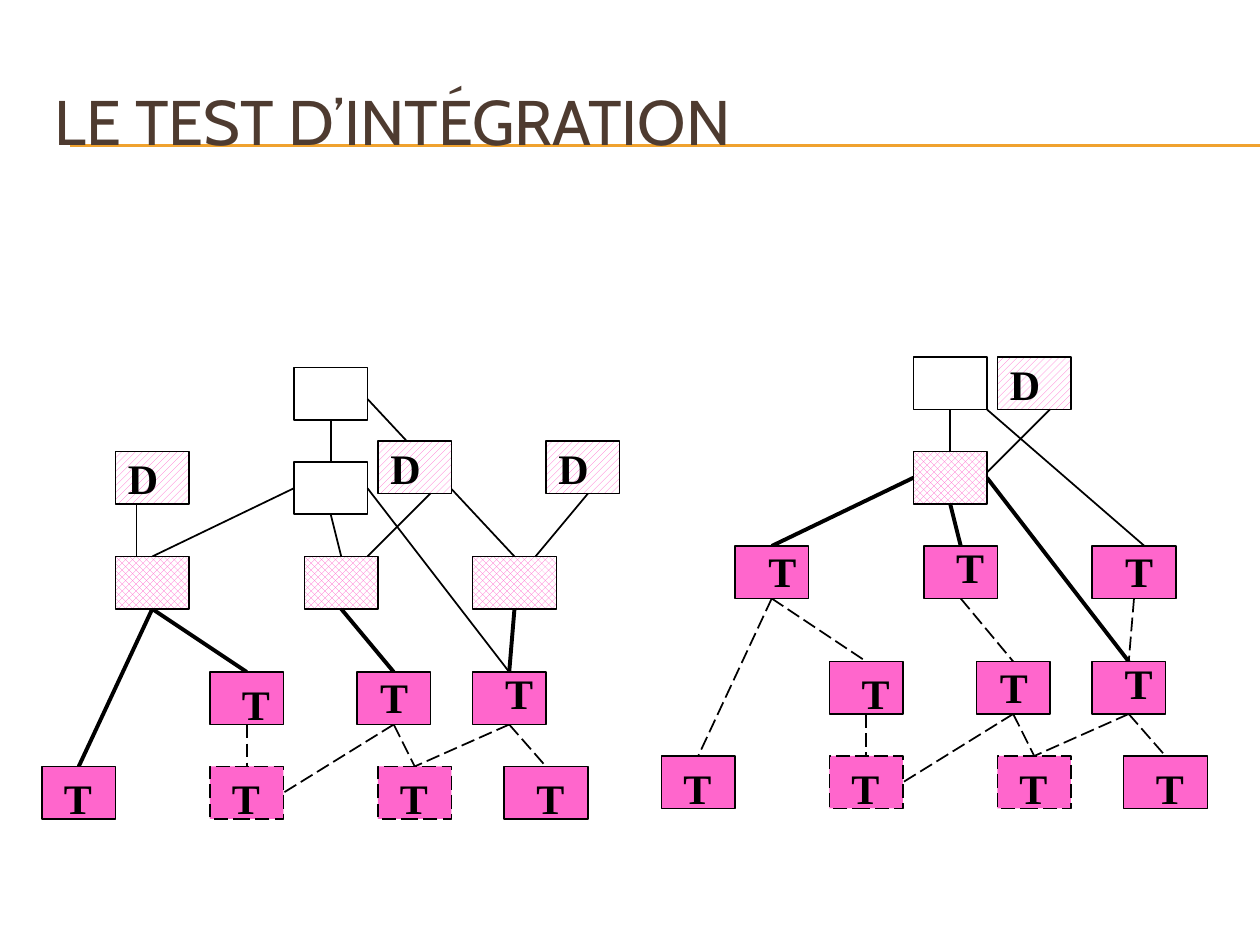
from lxml import etree
from pptx import Presentation
from pptx import util as u
from pptx.dml.color import RGBColor
from pptx.enum import dml, shapes, text
from pptx.oxml.ns import qn

BLACK, WHITE, PINK = "000000", "FFFFFF", "FF66CC"
BROWN, ORANGE = "4E3B30", "F0A22E"
BOX_WIDTH, BOX_HEIGHT = 42, 30
THIN, THICK = 1, 2.25
HATCHED = dml.MSO_PATTERN.WIDE_UPWARD_DIAGONAL
DIAMONDS = dml.MSO_PATTERN.OUTLINED_DIAMOND
LETTER = dict(size=24, font="Times New Roman", color=BLACK, bold=True)

# Module: left, top, width, then offset of its letter "T"
MODULES = {
    "root": (168, 210, 42, 0, 0),
    "sub": (168, 264, 42, 0, 0),
    "left": (66, 318, 42, 12, 0),
    "center": (174, 318, 42, 11.3, -2.4),
    "right": (270, 318, 48, 11.8, 0),
    "mid1": (120, 384, 42, 11.2, 3.5),
    "mid2": (204, 384, 42, 6.2, 0),
    "mid3": (270, 384, 42, 11.5, -2.4),
    "leaf1": (24, 438, 42, 5.4, 3.5),
    "leaf2": (120, 438, 42, 5.4, 3.5),
    "leaf3": (216, 438, 42, 5.4, 3.5),
    "leaf4": (288, 438, 48, 11.4, 3.5),
}
DASHED_MODULES = {"leaf2", "leaf3"}

# Caller, side it leaves from, callee, side it reaches
LINKS = [
    ("root", "bottom", "sub", "top"),
    ("sub", "left", "left", "top"),
    ("sub", "bottom", "center", "top"),
    ("sub", "right", "mid3", "top"),
    ("left", "bottom", "leaf1", "top"),
    ("left", "bottom", "mid1", "top"),
    ("center", "bottom", "mid2", "top"),
    ("right", "bottom", "mid3", "top"),
    ("mid1", "bottom", "leaf2", "top"),
    ("mid2", "bottom", "leaf2", "right"),
    ("mid2", "bottom", "leaf3", "top"),
    ("mid3", "bottom", "leaf3", "top"),
    ("mid3", "bottom", "leaf4", "top"),
]

# Each step of the integration; drivers hold a corner and a line
STEPS = [
    dict(
        offset=(0, 0),
        untested={"root", "sub"},
        under_test={"left", "center", "right"},
        root_link=(210, 228, 294, 318),
        drivers=[
            ((66, 258), (78, 288, 78, 318)),
            ((216, 252), (246, 282, 210, 318)),
            ((312, 252), (336, 282, 306, 318)),
        ],
    ),
    dict(
        offset=(354, -6),
        untested={"root"},
        under_test={"sub"},
        root_link=(210, 240, 300, 318),
        drivers=[((216, 210), (246, 240, 210, 276))],
    ),
]


def rgb(color):
    return RGBColor.from_string(color)


def write_text(shape, content, *, size, font, color, bold=False, left_inset=7.2):
    frame = shape.text_frame
    frame.word_wrap = True
    frame.vertical_anchor = text.MSO_ANCHOR.MIDDLE
    frame.margin_left = u.Pt(left_inset)
    frame.margin_right = frame.margin_top = frame.margin_bottom = 0
    paragraph = frame.paragraphs[0]
    paragraph.alignment = text.PP_ALIGN.LEFT
    run = paragraph.add_run()
    run.text = content
    run.font.size = u.Pt(size)
    run.font.name = font
    run.font.bold = bold
    run.font.color.rgb = rgb(color)


def format_line(line, color, width, dashed=False):
    line.color.rgb = rgb(color)
    line.width = u.Pt(width)
    if dashed:
        line.dash_style = dml.MSO_LINE.LONG_DASH


def add_line(parent, ends, color=BLACK, width=THIN, dashed=False):
    connector = parent.add_connector(
        shapes.MSO_CONNECTOR.STRAIGHT, *(u.Pt(value) for value in ends)
    )
    format_line(connector.line, color, width, dashed)
    etree.SubElement(connector.element.spPr, qn("a:effectLst"))


def add_box(parent, left, top, width=BOX_WIDTH, color=None, pattern=None, dashed=False):
    box = parent.add_shape(
        shapes.MSO_SHAPE.RECTANGLE, u.Pt(left), u.Pt(top), u.Pt(width), u.Pt(BOX_HEIGHT)
    )
    box.shadow.inherit = False
    if pattern:
        box.fill.patterned()
        box.fill.pattern = pattern
        box.fill.fore_color.rgb = rgb(PINK)
        box.fill.back_color.rgb = rgb(WHITE)
    elif color:
        box.fill.solid()
        box.fill.fore_color.rgb = rgb(color)
    else:
        box.fill.background()
    format_line(box.line, BLACK, THIN, dashed)
    return box


def add_letter(parent, left, top):
    label = parent.add_textbox(u.Pt(left), u.Pt(top), u.Pt(25.2), u.Pt(28.8))
    write_text(label, "T", **LETTER)


def port(module, side):
    left, top, width = MODULES[module][:3]
    return {
        "top": (left + width / 2, top),
        "bottom": (left + width / 2, top + BOX_HEIGHT),
        "left": (left, top + BOX_HEIGHT / 2),
        "right": (left + width, top + BOX_HEIGHT / 2),
    }[side]


def add_step(slide, offset, untested, under_test, root_link, drivers):
    parent = slide.shapes.add_group_shape().shapes
    across, down = offset
    tested = MODULES.keys() - untested - under_test

    def shifted(ends):
        return [value + move for value, move in zip(ends, (across, down) * 2)]

    # Calls: dashed once tested, thick where they are being tested
    add_line(parent, shifted(root_link))
    for caller, start, callee, end in LINKS:
        thick = caller in under_test and callee in tested
        add_line(
            parent,
            shifted(port(caller, start) + port(callee, end)),
            width=THICK if thick else THIN,
            dashed=caller in tested,
        )

    # Modules, lettered once tested
    for name, (left, top, width, letter_x, letter_y) in MODULES.items():
        x, y = left + across, top + down
        add_box(
            parent, x, y, width,
            color=PINK if name in tested else None,
            pattern=DIAMONDS if name in under_test else None,
            dashed=name in DASHED_MODULES,
        )
        if name in tested:
            add_letter(parent, x + letter_x, y + letter_y)

    # Drivers
    for (left, top), ends in drivers:
        driver = add_box(parent, left + across, top + down, pattern=HATCHED)
        write_text(driver, "D", **LETTER)
        add_line(parent, shifted(ends))


def add_title(slide):
    for y in (82.8, 83.5):
        add_line(slide.shapes, (40.3, y, 720, y), color=ORANGE, width=0.75)
    title = slide.shapes.title
    title.left, title.top = u.Pt(24), u.Pt(36)
    title.width, title.height = u.Pt(684), u.Pt(66)
    write_text(title, "LE TEST D’INTÉGRATION", size=36, font="Cabin", color=BROWN)
    # Bring the title in front of its rule
    title.element.getparent().append(title.element)


def main():
    presentation = Presentation()
    presentation.slide_width, presentation.slide_height = u.Pt(720), u.Pt(540)
    slide = presentation.slides.add_slide(presentation.slide_layouts[5])
    add_title(slide)
    for step in STEPS:
        add_step(slide, **step)
    presentation.save("out.pptx")


if __name__ == "__main__":
    main()
